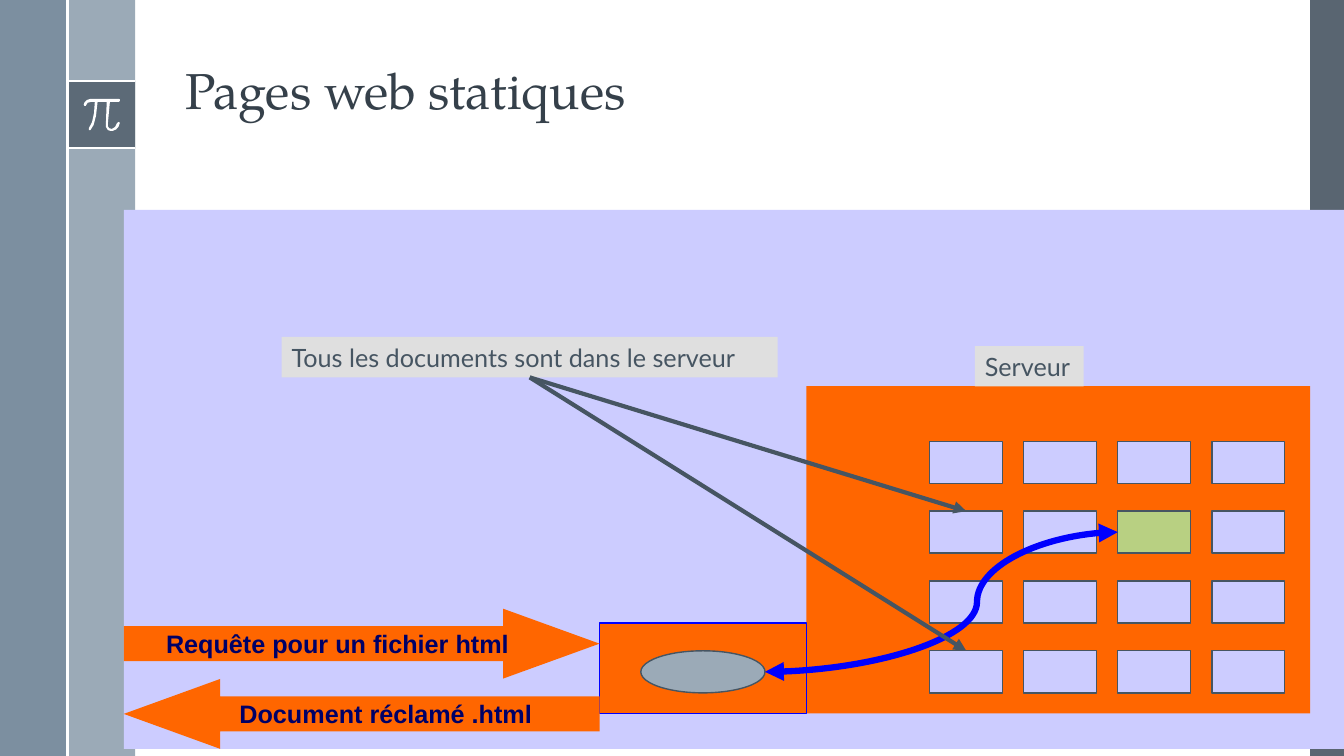
from lxml import etree
from pptx import Presentation
from pptx.dml.color import RGBColor
from pptx.enum.shapes import MSO_CONNECTOR, MSO_SHAPE
from pptx.enum.text import MSO_ANCHOR, PP_ALIGN
from pptx.oxml.ns import qn
from pptx.util import Cm, Pt

RECTANGLE, OVAL = MSO_SHAPE.RECTANGLE, MSO_SHAPE.OVAL
RIGHT_ARROW, LEFT_ARROW = MSO_SHAPE.RIGHT_ARROW, MSO_SHAPE.LEFT_ARROW
STRAIGHT, CURVE = MSO_CONNECTOR.STRAIGHT, MSO_CONNECTOR.CURVE
TOP, MIDDLE, BOTTOM = MSO_ANCHOR.TOP, MSO_ANCHOR.MIDDLE, MSO_ANCHOR.BOTTOM
LEFT, CENTER = PP_ALIGN.LEFT, PP_ALIGN.CENTER

WHITE = RGBColor(0xFF, 0xFF, 0xFF)
SLATE = RGBColor(0x47, 0x55, 0x62)
STEEL = RGBColor(0x6A, 0x80, 0x93)
MIST = RGBColor(0x9B, 0xAA, 0xB7)
INK = RGBColor(0x46, 0x55, 0x62)
TITLE_INK = RGBColor(0x35, 0x40, 0x4A)
LAVENDER = RGBColor(0xCC, 0xCC, 0xFF)
ORANGE = RGBColor(0xFF, 0x66, 0x00)
GREEN = RGBColor(0xB8, 0xD0, 0x82)
BLUE = RGBColor(0x00, 0x00, 0xFF)
NAVY = RGBColor(0x00, 0x00, 0x66)
GRAY = RGBColor(0xDF, 0xDF, 0xDF)

TITLE_FONT = {"name": "TeX Gyre Pagella", "size": Pt(36)}
LABEL_FONT = {"name": "Lato", "size": Pt(18)}
ARROW_FONT = {"name": "Arial", "size": Pt(18), "bold": True}

presentation = Presentation()
presentation.slide_width = Cm(33.87)
presentation.slide_height = Cm(19.05)
slide = presentation.slides.add_slide(presentation.slide_layouts[6])
shapes = slide.shapes


def add_box(kind, left, top, width, height, fill, line=None):
    shape = shapes.add_shape(kind, Cm(left), Cm(top), Cm(width), Cm(height))
    shape.shadow.inherit = False
    shape.fill.solid()
    shape.fill.fore_color.rgb = fill
    if line is None:
        shape.line.fill.background()
    else:
        shape.line.color.rgb = line
        shape.line.width = Pt(1)
    return shape


def write_text(shape, text, font, color, anchor, alignment, wrap=True):
    frame = shape.text_frame
    frame.word_wrap = wrap
    frame.vertical_anchor = anchor
    paragraph = frame.paragraphs[0]
    paragraph.alignment = alignment
    run = paragraph.add_run()
    run.text = text
    for name, value in font.items():
        setattr(run.font, name, value)
    run.font.color.rgb = color
    return paragraph


for left, top, width, height, color, opacity in [
    (33.02, 0, 0.85, 19.05, SLATE, 90),
    (1.7, 0, 1.71, 19.05, MIST, 100),
    (0, 0, 1.7, 19.05, STEEL, 88),
    (1.7, 2.05, 1.71, 1.69, SLATE, 75),
]:
    band = add_box(RECTANGLE, left, top, width, height, color)
    if opacity < 100:
        color_element = band.fill._xPr.find(qn("a:solidFill"))[0]
        etree.SubElement(color_element, qn("a:alpha"), val=str(opacity * 1000))

connectors = []
for start_x, start_y, end_x, end_y in [
    (1.7, 2.05, 3.41, 2.05),
    (1.7, 3.74, 3.41, 3.74),
    (1.7, 0, 1.7, 19.05),
]:
    rule = shapes.add_connector(STRAIGHT, Cm(start_x), Cm(start_y), Cm(end_x), Cm(end_y))
    rule.line.color.rgb = WHITE
    rule.line.width = Pt(1.5)
    connectors.append(rule)

pi_points = [
    (3.0, 2.49), (2.29, 2.49), (2.19, 2.52), (2.13, 2.58), (2.11, 2.64),
    (2.13, 2.67), (2.16, 2.67), (2.21, 2.59), (2.29, 2.57), (2.39, 2.57),
    (2.37, 2.85), (2.32, 3.08), (2.24, 3.23), (2.24, 3.28), (2.28, 3.28),
    (2.36, 3.15), (2.42, 2.92), (2.46, 2.57), (2.69, 2.57), (2.67, 3.1),
    (2.67, 3.2), (2.72, 3.28), (2.79, 3.3), (2.84, 3.3), (2.93, 3.26),
    (2.99, 3.19), (3.02, 3.1), (3.0, 3.07), (2.95, 3.1), (2.9, 3.2),
    (2.82, 3.25), (2.75, 3.23), (2.72, 3.18), (2.72, 3.1), (2.77, 2.57),
    (3.0, 2.57), (3.02, 2.54), (3.02, 2.51),
]
start_x, start_y = pi_points[0]
builder = shapes.build_freeform(Cm(start_x), Cm(start_y))
builder.add_line_segments([(Cm(x), Cm(y)) for x, y in pi_points[1:]], close=True)
pi_symbol = builder.convert_to_shape()
pi_symbol.shadow.inherit = False
pi_symbol.fill.solid()
pi_symbol.fill.fore_color.rgb = WHITE
pi_symbol.line.fill.background()

add_box(RECTANGLE, 3.12, 5.29, 30.75, 13.58, LAVENDER)
title = shapes.add_textbox(Cm(4.42), Cm(0.48), Cm(27.18), Cm(2.69))
title_paragraph = write_text(
    title, "Pages web statiques", TITLE_FONT, TITLE_INK, BOTTOM, LEFT)
title_paragraph.line_spacing = 0.9

add_box(RECTANGLE, 20.32, 9.73, 12.7, 8.25, ORANGE)
documents = {}
for row in range(4):
    for column in range(4):
        color = GREEN if (row, column) == (1, 2) else LAVENDER
        documents[row, column] = add_box(
            RECTANGLE, 23.43 + column * 2.37, 11.12 + row * 1.76, 1.84, 1.06, color, INK)

add_box(RECTANGLE, 15.11, 15.7, 5.21, 2.28, ORANGE, BLUE)
add_box(OVAL, 16.15, 16.4, 3.13, 1.06, MIST, INK)

labels = []
for left, top, width, text in [
    (7.1, 8.49, 12.5, "Tous les documents sont dans le serveur"),
    (24.57, 8.72, 2.74, "Serveur"),
]:
    label = add_box(RECTANGLE, left, top, width, 1.02, GRAY)
    write_text(label, text, LABEL_FONT, INK, TOP, LEFT)
    labels.append(label)

for kind, top, text in [
    (RIGHT_ARROW, 15.34, "Requête pour un fichier html"),
    (LEFT_ARROW, 17.11, "Document réclamé .html"),
]:
    arrow = add_box(kind, 3.12, top, 11.99, 1.76, ORANGE)
    arrow.adjustments[0] = 0.5
    arrow.adjustments[1] = 1.38
    write_text(arrow, text, ARROW_FONT, NAVY, MIDDLE, CENTER, wrap=False)

exchange = shapes.add_connector(CURVE, Cm(28.17), Cm(13.41), Cm(19.28), Cm(16.93))
exchange.begin_connect(documents[1, 2], 1)
guides = exchange._element.spPr.find(qn("a:prstGeom")).get_or_add_avLst()
etree.SubElement(guides, qn("a:gd"), name="adj1", fmla="val 39900")
pointers = [(exchange, BLUE, 4.5, ("a:headEnd", "a:tailEnd"))]
for row in (1, 3):
    pointer = shapes.add_connector(STRAIGHT, 0, 0, Cm(1), Cm(1))
    pointer.begin_connect(labels[0], 2)
    pointer.end_connect(documents[row, 0], 0)
    pointers.append((pointer, INK, 3, ("a:tailEnd",)))

for pointer, color, width, ends in pointers:
    pointer.line.color.rgb = color
    pointer.line.width = Pt(width)
    for end in ends:
        etree.SubElement(pointer.line._ln, qn(end), type="triangle")
    connectors.append(pointer)

for connector in connectors:
    etree.SubElement(connector._element.spPr, qn("a:effectLst"))

presentation.save("out.pptx")
